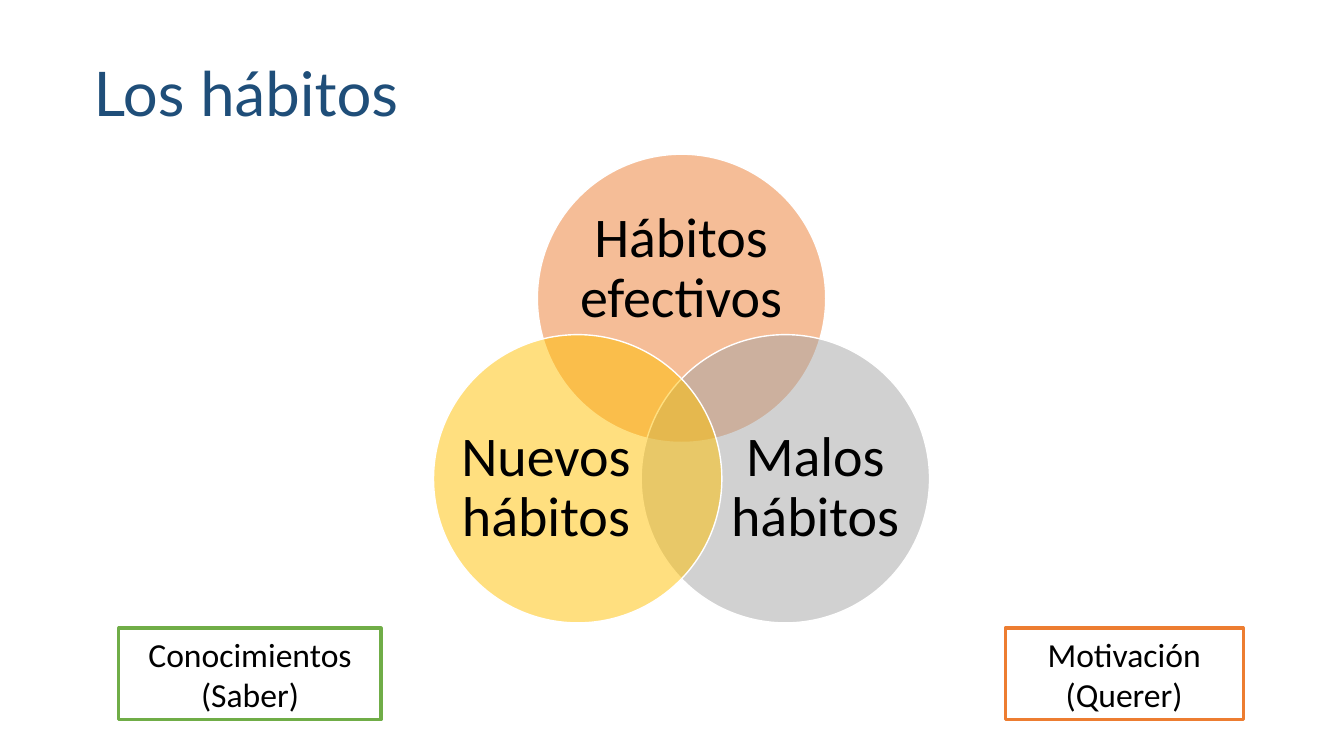
from dataclasses import dataclass

from lxml import etree
from pptx import Presentation
from pptx.dml.color import RGBColor
from pptx.enum.shapes import MSO_SHAPE
from pptx.enum.text import MSO_ANCHOR, PP_ALIGN
from pptx.oxml.ns import qn
from pptx.util import Inches, Pt

OVAL, RECTANGLE = MSO_SHAPE.OVAL, MSO_SHAPE.RECTANGLE
LEFT, CENTER = PP_ALIGN.LEFT, PP_ALIGN.CENTER
MIDDLE = MSO_ANCHOR.MIDDLE


@dataclass(frozen=True)
class Theme:
    title_font: str = "Lato"
    body_font: str = "Calibri"
    title_size: int = 44
    circle_size: int = 40
    box_size: int = 24
    navy: str = "1F4E79"
    black: str = "000000"
    white: str = "FFFFFF"
    orange: str = "ED7D31"
    gray: str = "A5A5A5"
    gold: str = "FFC000"
    green: str = "70AD47"


class HabitsSlide:
    def __init__(self, page, theme):
        self.page = page
        self.theme = theme

    def set_text(self, shape, text, size, color, font, align=CENTER, spacing=1.0, inset=None):
        frame = shape.text_frame
        frame.text = text
        frame.word_wrap = True
        frame.vertical_anchor = MIDDLE
        if inset is not None:
            frame.margin_left = frame.margin_right = Inches(inset)
            frame.margin_top = frame.margin_bottom = Inches(inset)
        para = frame.paragraphs[0]
        para.alignment = align
        para.line_spacing = spacing
        for span in para.runs:
            span.font.name = font
            span.font.size = Pt(size)
            span.font.color.rgb = RGBColor.from_string(color)

    def paint(self, shape, fill, line, width):
        shape.shadow.inherit = False
        shape.fill.solid()
        shape.fill.fore_color.rgb = RGBColor.from_string(fill)
        shape.line.color.rgb = RGBColor.from_string(line)
        shape.line.width = Pt(width)

    def title(self, text, *place):
        box = self.page.shapes.add_textbox(*map(Inches, place))
        self.set_text(box, text, self.theme.title_size, self.theme.navy,
                      self.theme.title_font, LEFT, 0.9)

    def venn(self, circles, diameter):
        """Draw overlapping half-transparent circles, each with its own label area."""
        group = self.page.shapes.add_group_shape()
        for text, color, (left, top), label_place in circles:
            circle = group.shapes.add_shape(
                OVAL, *map(Inches, (left, top, diameter, diameter)))
            self.paint(circle, color, self.theme.white, 1)
            fill_color = circle.element.spPr.find(qn("a:solidFill"))[0]
            etree.SubElement(fill_color, qn("a:alpha"), val="50000")
            label = group.shapes.add_textbox(*map(Inches, label_place))
            self.set_text(label, text, self.theme.circle_size, self.theme.black,
                          self.theme.body_font, spacing=0.9, inset=0)

    def framed_box(self, text, color, *place):
        box = self.page.shapes.add_shape(RECTANGLE, *map(Inches, place))
        self.paint(box, self.theme.white, color, 2.25)
        self.set_text(box, text, self.theme.box_size, self.theme.black, self.theme.body_font)


def main():
    deck = Presentation()
    deck.slide_width, deck.slide_height = Inches(13.33), Inches(7.5)
    theme = Theme()
    habits = HabitsSlide(deck.slides.add_slide(deck.slide_layouts[6]), theme)

    habits.title("Los hábitos", 0.83, 0.23, 11.5, 1.45)
    habits.venn([
        ("Hábitos efectivos", theme.orange, (5.33, 1.53), (5.71, 2.03, 2.09, 1.28)),
        ("Malos hábitos", theme.gray, (6.36, 3.32), (7.23, 4.06, 1.71, 1.57)),
        ("Nuevos hábitos", theme.gold, (4.3, 3.32), (4.56, 4.06, 1.71, 1.57)),
    ], diameter=2.86)
    habits.framed_box("Conocimientos (Saber)", theme.green, 1.18, 6.23, 2.6, 0.91)
    habits.framed_box("Motivación (Querer)", theme.orange, 9.97, 6.23, 2.36, 0.91)

    deck.save("out.pptx")


if __name__ == "__main__":
    main()
